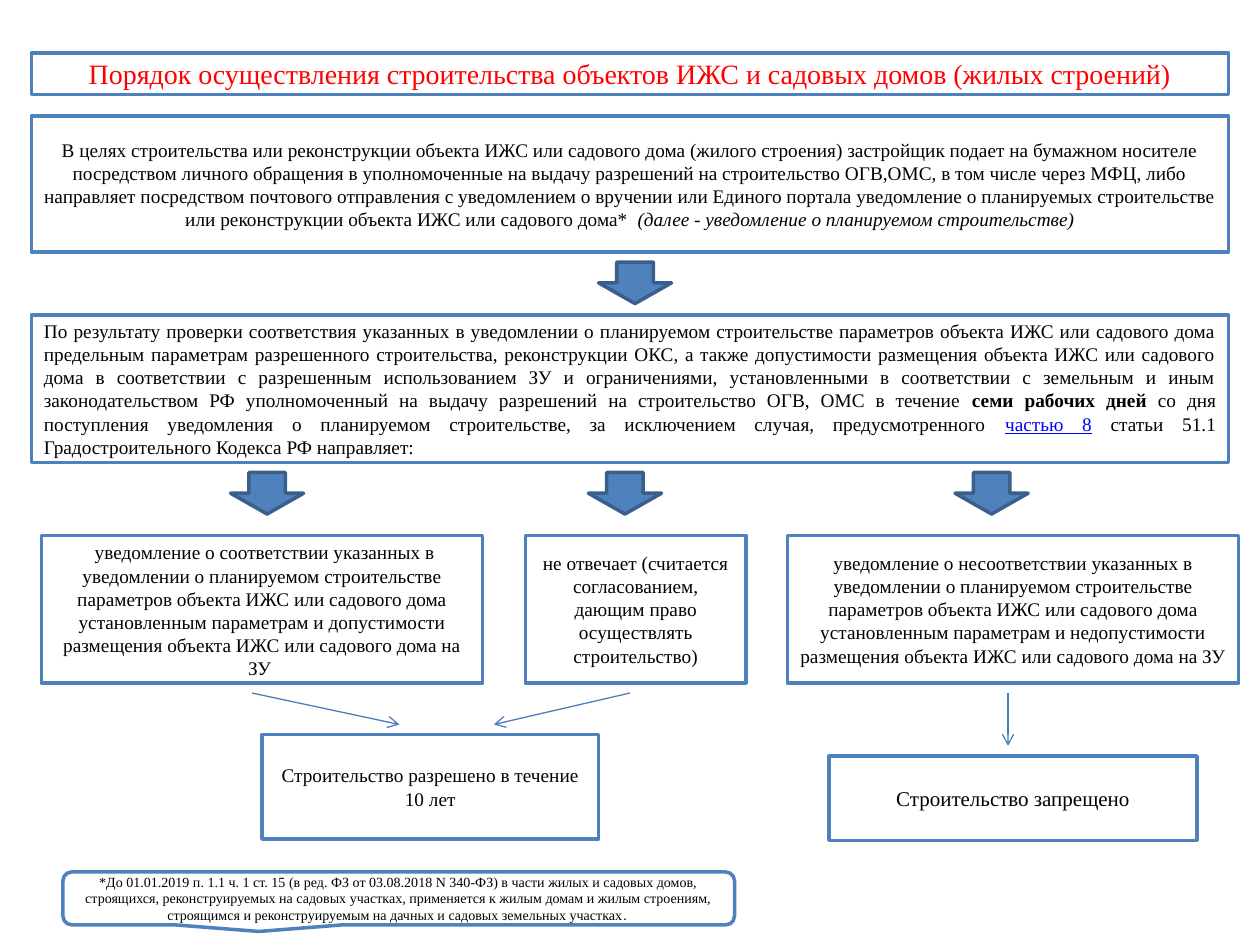
from lxml.etree import SubElement
from pptx import Presentation
from pptx.dml.color import RGBColor
from pptx.enum.shapes import MSO_CONNECTOR, MSO_SHAPE
from pptx.enum.text import MSO_ANCHOR, PP_ALIGN
from pptx.oxml.ns import qn
from pptx.util import Inches, Pt

COLORS = {
    "box": "FFFFFF",
    "border": "4F81BD",
    "arrow": "4F81BD",
    "arrow_border": "3A5F8C",
    "connector": "4B7EBC",
    "text": "000000",
    "title": "FF0000",
    "link": "0000FF",
}
FONT = "Times New Roman"

MARGIN, FULL_WIDTH = 0.25, 9.5
OUTCOME_TOP, OUTCOME_HEIGHT = 4.25, 1.17
ARROW_WIDTH, ARROW_HEIGHT = 0.58, 0.33
CONNECTOR_TOP = 5.5

FULL_WIDTH_BOXES = [
    (0.42, 0.33, [
        ("Порядок осуществления строительства объектов ИЖС и садовых домов (жилых строений)", {}),
    ], {"size": 16, "color": "title"}),
    (0.92, 1.08, [
        ("В целях строительства или реконструкции объекта ИЖС или садового дома (жилого строения) "
         "застройщик подает на бумажном носителе посредством личного обращения в уполномоченные "
         "на выдачу разрешений на строительство ОГВ,ОМС, в том числе через МФЦ, либо направляет "
         "посредством почтового отправления с уведомлением о вручении или Единого портала "
         "уведомление о планируемых строительстве или реконструкции объекта ИЖС или садового дома*  ", {}),
        ("(далее - уведомление о планируемом строительстве)", {"italic": True}),
    ], {}),
    (2.5, 1.17, [
        ("По результату проверки соответствия указанных в уведомлении о планируемом строительстве "
         "параметров объекта ИЖС или садового дома предельным параметрам разрешенного строительства, "
         "реконструкции ОКС, а также допустимости размещения объекта ИЖС или садового дома в "
         "соответствии с разрешенным использованием ЗУ и ограничениями, установленными в соответствии "
         "с земельным и иным законодательством РФ уполномоченный на выдачу разрешений на "
         "строительство ОГВ, ОМС в течение ", {}),
        ("семи рабочих дней ", {"bold": True}),
        ("со дня поступления уведомления о планируемом строительстве, за исключением случая, "
         "предусмотренного ", {}),
        ("частью 8", {"color": "link", "underline": True}),
        (" статьи 51.1 Градостроительного Кодекса РФ направляет:", {}),
    ], {"align": PP_ALIGN.JUSTIFY}),
]

OUTCOMES = [
    (0.33, 3.5, [
        (" ", {"size": 12}),
        ("уведомление о соответствии указанных в уведомлении о планируемом строительстве параметров "
         "объекта ИЖС или садового дома установленным параметрам и допустимости размещения объекта "
         "ИЖС или садового дома на ЗУ ", {}),
    ]),
    (4.17, 1.75, [
        ("не отвечает (считается согласованием, дающим право осуществлять строительство)", {}),
    ]),
    (6.25, 3.58, [
        ("уведомление о несоответствии указанных в уведомлении о планируемом строительстве параметров "
         "объекта ИЖС или садового дома установленным параметрам и недопустимости размещения объекта "
         "ИЖС или садового дома на ЗУ ", {}),
    ]),
]

RESULTS = [
    ((2.08, 5.83, 2.67, 0.83), [("Строительство разрешено в течение 10 лет", {})], 11),
    ((6.58, 6, 2.92, 0.67), [("Строительство запрещено", {})], 12),
]

FOOTNOTE = [
    ("*До 01.01.2019 п. 1.1 ч. 1 ст. 15 (в ред. ФЗ от 03.08.2018 N 340-ФЗ) в части жилых и садовых "
     "домов, строящихся, реконструируемых на садовых участках, применяется к жилым домам и жилым "
     "строениям, строящимся и реконструируемым на дачных и садовых земельных участках", {}),
    (". ", {"font": "Calibri"}),
]

DOWN_ARROWS = [(4.75, 2.08), (1.83, 3.75), (4.67, 3.75), (7.58, 3.75)]
CONNECTORS = [(2, 3.17, 5.75), (5, 3.92, 5.75), (8, 8, 5.92)]


def rgb(name):
    return RGBColor.from_string(COLORS[name])


def add_shape(slide, kind, position, fill="box", border="border"):
    shape = slide.shapes.add_shape(kind, *map(Inches, position))
    shape.shadow.inherit = False
    shape.fill.solid()
    shape.fill.fore_color.rgb = rgb(fill)
    shape.line.color.rgb = rgb(border)
    shape.line.width = Pt(2)
    return shape


def add_run(paragraph, text, size=11, color="text", font=FONT,
            bold=False, italic=False, underline=False):
    run = paragraph.add_run()
    run.text = text
    run.font.name = font
    run.font.size = Pt(size)
    run.font.color.rgb = rgb(color)
    run.font.bold = bold
    run.font.italic = italic
    run.font.underline = underline


def add_box(slide, position, runs, kind=MSO_SHAPE.RECTANGLE, align=PP_ALIGN.CENTER, **base):
    frame = add_shape(slide, kind, position).text_frame
    frame.word_wrap = True
    frame.vertical_anchor = MSO_ANCHOR.MIDDLE
    paragraph = frame.paragraphs[0]
    paragraph.alignment = align
    for text, changes in runs:
        add_run(paragraph, text, **{**base, **changes})


def add_arrow_line(slide, start_x, end_x, end_y):
    connector = slide.shapes.add_connector(
        MSO_CONNECTOR.STRAIGHT, *map(Inches, (start_x, CONNECTOR_TOP, end_x, end_y)))
    connector.line.color.rgb = rgb("connector")
    connector.line.width = Pt(0.75)
    SubElement(connector.line._get_or_add_ln(), qn("a:tailEnd"), type="arrow")
    SubElement(connector._element.spPr, qn("a:effectLst"))


def main():
    presentation = Presentation()
    presentation.slide_width, presentation.slide_height = Inches(10), Inches(7.5)
    slide = presentation.slides.add_slide(presentation.slide_layouts[6])

    for top, height, runs, options in FULL_WIDTH_BOXES:
        add_box(slide, (MARGIN, top, FULL_WIDTH, height), runs, **options)
    for left, top in DOWN_ARROWS:
        add_shape(slide, MSO_SHAPE.DOWN_ARROW, (left, top, ARROW_WIDTH, ARROW_HEIGHT),
                  fill="arrow", border="arrow_border")
    for left, width, runs in OUTCOMES:
        add_box(slide, (left, OUTCOME_TOP, width, OUTCOME_HEIGHT), runs)
    for ends in CONNECTORS:
        add_arrow_line(slide, *ends)
    for position, runs, size in RESULTS:
        add_box(slide, position, runs, size=size)
    add_box(slide, (0.5, 6.92, 5.33, 0.42), FOOTNOTE,
            kind=MSO_SHAPE.ROUNDED_RECTANGULAR_CALLOUT, size=8)

    presentation.save("out.pptx")


if __name__ == "__main__":
    main()
